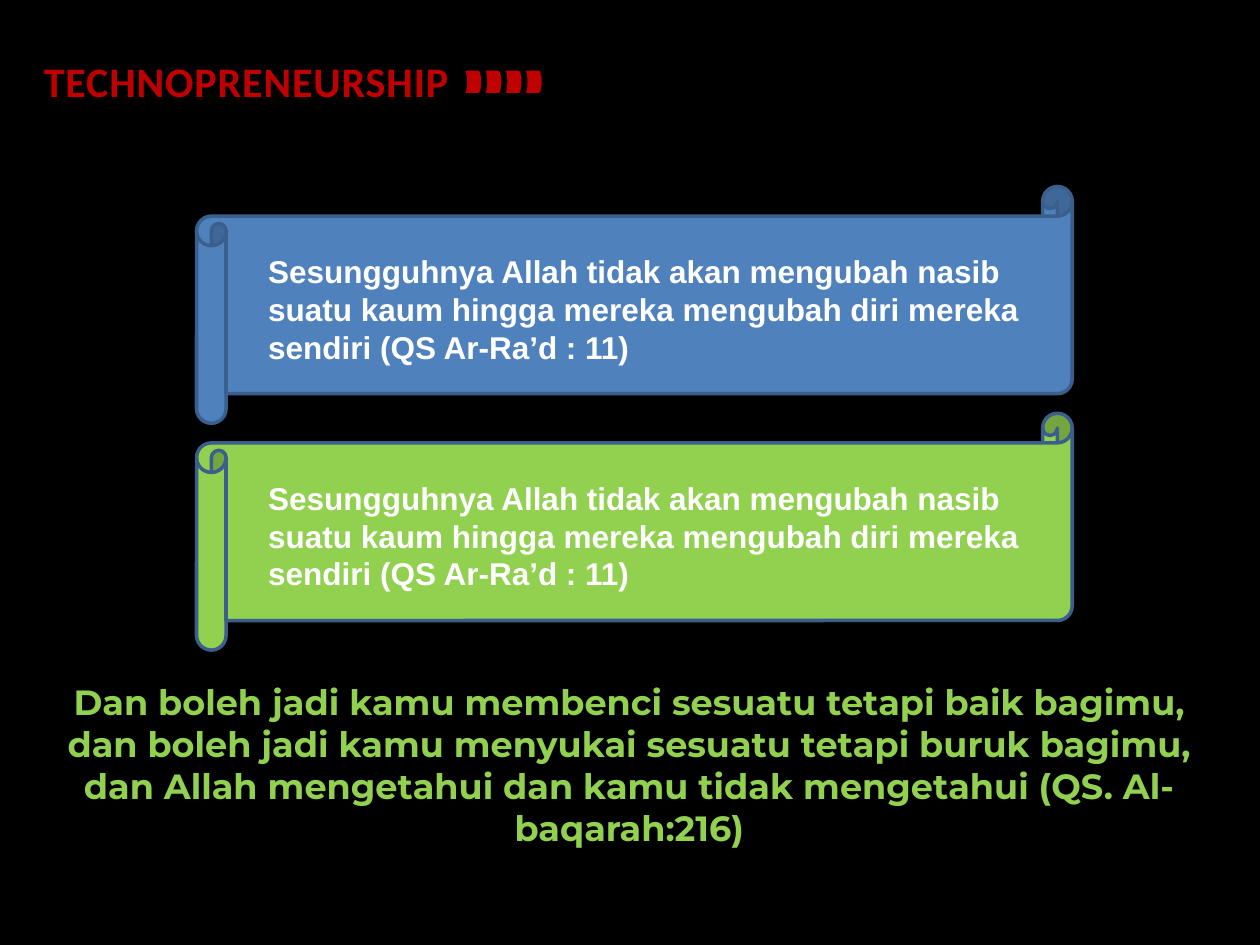
from pptx import Presentation
from pptx.dml.color import RGBColor
from pptx.enum.shapes import MSO_SHAPE
from pptx.enum.text import MSO_ANCHOR, MSO_AUTO_SIZE, PP_ALIGN
from pptx.oxml.ns import qn
from pptx.util import Inches, Pt

SCROLL = MSO_SHAPE.HORIZONTAL_SCROLL
MARKER = MSO_SHAPE.FLOWCHART_STORED_DATA
LEFT, CENTER = PP_ALIGN.LEFT, PP_ALIGN.CENTER
TOP = MSO_ANCHOR.TOP
GROW = MSO_AUTO_SIZE.SHAPE_TO_FIT_TEXT

BLACK = RGBColor(0x00, 0x00, 0x00)
WHITE = RGBColor(0xFF, 0xFF, 0xFF)
RED = RGBColor(0xC0, 0x00, 0x00)
BLUE = RGBColor(0x4F, 0x81, 0xBD)
DARK_BLUE = RGBColor(0x3A, 0x5F, 0x8C)
GREEN = RGBColor(0x92, 0xD0, 0x50)

TITLE = "TECHNOPRENEURSHIP"
SCROLL_VERSE = (
    "Sesungguhnya Allah tidak akan mengubah nasib suatu kaum hingga "
    "mereka mengubah diri mereka sendiri (QS Ar-Ra’d : 11)"
)
CLOSING_VERSE = (
    "Dan boleh jadi kamu membenci sesuatu tetapi baik bagimu, dan boleh jadi "
    "kamu menyukai sesuatu tetapi buruk bagimu, dan Allah mengetahui dan kamu "
    "tidak mengetahui (QS. Al-baqarah:216)"
)


class SlideBuilder:
    def __init__(self, slide):
        self.slide = slide
        background = slide.background.fill
        background.solid()
        background.fore_color.rgb = BLACK

    def fill_text(self, shape, text, font, size, color, alignment, wrap=True):
        frame = shape.text_frame
        frame.text = text
        frame.word_wrap = wrap
        frame.auto_size = GROW
        frame.vertical_anchor = TOP
        paragraph = frame.paragraphs[0]
        paragraph.alignment = alignment
        style = paragraph.runs[0].font
        style.name, style.size, style.bold = font, Pt(size), True
        style.color.rgb = color

    def title(self, text, left, top, width, height):
        shape = self.slide.shapes.title
        shape.left, shape.top = Inches(left), Inches(top)
        shape.width, shape.height = Inches(width), Inches(height)
        self.fill_text(shape, text, "Calibri", 24, RED, CENTER, wrap=False)
        for properties in shape.element.iter(qn("a:rPr")):
            properties.set("spc", "50")

    def text(self, text, left, top, width, height, font, size, color, alignment):
        box = self.slide.shapes.add_textbox(
            Inches(left), Inches(top), Inches(width), Inches(height))
        self.fill_text(box, text, font, size, color, alignment)

    def shape(self, shapes, kind, left, top, width, height, fill, line, weight):
        shape = shapes.add_shape(
            kind, Inches(left), Inches(top), Inches(width), Inches(height))
        shape.shadow.inherit = False
        shape.fill.solid()
        shape.fill.fore_color.rgb = fill
        shape.line.color.rgb = line
        shape.line.width = Pt(weight)
        return shape

    def scroll(self, top, fill):
        self.shape(self.slide.shapes, SCROLL, 1.56, top, 6.95, 1.88,
                   fill, DARK_BLUE, 2)
        self.text(SCROLL_VERSE, 2.03, top + 0.47, 6.25, 1.01,
                  "Arial", 18, WHITE, LEFT)

    def markers(self, count, left, top, width, height):
        """Draw a grouped row of touching markers that point right."""
        group = self.slide.shapes.add_group_shape()
        for index in range(count):
            marker = self.shape(group.shapes, MARKER, left + index * width, top,
                                width, height, RED, BLACK, 1.5)
            marker.element.spPr.find(qn("a:xfrm")).set("flipH", "1")


def main():
    presentation = Presentation()
    presentation.slide_width = Inches(10)
    presentation.slide_height = Inches(7.5)
    title_only = presentation.slide_layouts.get_by_name("Title Only")
    builder = SlideBuilder(presentation.slides.add_slide(title_only))

    builder.title(TITLE, 0.23, 0.39, 3.45, 0.5)
    builder.markers(4, 3.67, 0.55, 0.16, 0.2)
    for top, fill in ((1.48, BLUE), (3.28, GREEN)):
        builder.scroll(top, fill)
    builder.text(CLOSING_VERSE, 0.23, 5.35, 9.53, 1.45,
                 "Montserrat", 20, GREEN, CENTER)

    presentation.save("out.pptx")


if __name__ == "__main__":
    main()
